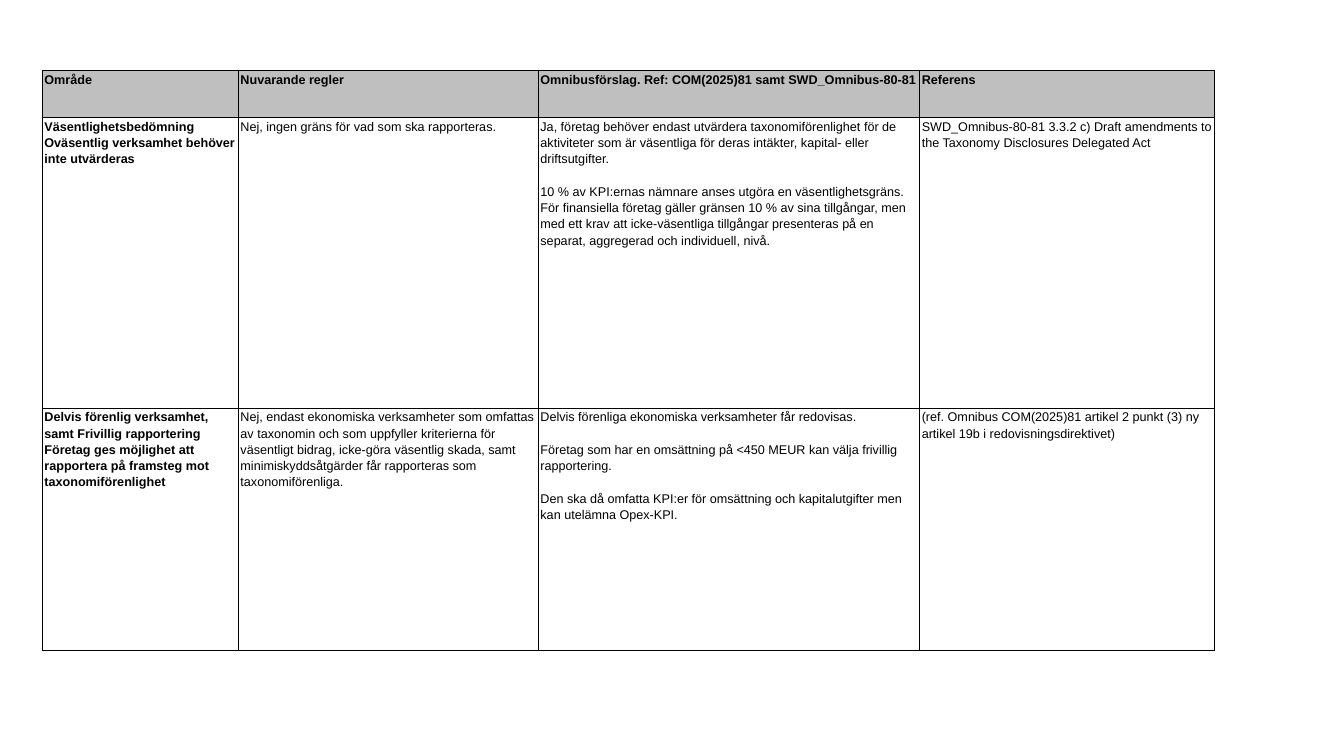
from pptx import Presentation
from pptx.dml.color import RGBColor
from pptx.enum.text import MSO_ANCHOR
from pptx.oxml import parse_xml
from pptx.oxml.ns import nsdecls
from pptx.util import Cm, Pt

TOP = MSO_ANCHOR.TOP
BLACK, WHITE, GREY = "000000", "FFFFFF", "BFBFBF"
COLUMN_WIDTHS = [4.94, 7.56, 9.61, 7.43]
TABLE_LEFT = 1.07
HEADER_TOP, HEADER_HEIGHT = 1.78, 1.19
ROW_HEIGHTS = [7.32, 6.1]

# Each cell is a list of paragraphs; \v is a line break within one.
HEADER = [[
    ["Område"],
    ["Nuvarande regler"],
    ["Omnibusförslag. Ref: COM(2025)81 samt SWD_Omnibus-80-81"],
    ["Referens"],
]]
RULES = [
    [
        ["Väsentlighetsbedömning\vOväsentlig verksamhet behöver inte utvärderas"],
        ["Nej, ingen gräns för vad som ska rapporteras."],
        ["Ja, företag behöver endast utvärdera taxonomiförenlighet för de aktiviteter "
         "som är väsentliga för deras intäkter, kapital- eller driftsutgifter.",
         "10 % av KPI:ernas nämnare anses utgöra en väsentlighetsgräns. För finansiella "
         "företag gäller gränsen 10 % av sina tillgångar, men med ett krav att "
         "icke-väsentliga tillgångar presenteras på en separat, aggregerad och "
         "individuell, nivå."],
        ["SWD_Omnibus-80-81 3.3.2 c) Draft amendments to the Taxonomy Disclosures "
         "Delegated Act"],
    ],
    [
        ["Delvis förenlig verksamhet, samt Frivillig rapportering\v"
         "Företag ges möjlighet att rapportera på framsteg mot taxonomiförenlighet"],
        ["Nej, endast ekonomiska verksamheter som omfattas av taxonomin och som uppfyller "
         "kriterierna för väsentligt bidrag, icke-göra väsentlig skada, samt "
         "minimiskyddsåtgärder får rapporteras som taxonomiförenliga."],
        ["Delvis förenliga ekonomiska verksamheter får redovisas.",
         "Företag som har en omsättning på <450 MEUR kan välja frivillig rapportering.",
         "Den ska då omfatta KPI:er för omsättning och kapitalutgifter men kan utelämna "
         "Opex-KPI."],
        ["(ref. Omnibus COM(2025)81 artikel 2 punkt (3) ny artikel 19b i "
         "redovisningsdirektivet)"],
    ],
]


def color(hex_value):
    return RGBColor.from_string(hex_value)


def format_cell(cell, paragraphs, fill, bold):
    """Fill a cell with text and give it thin black borders."""
    cell.margin_left = cell.margin_right = Cm(0.05)
    cell.margin_top = cell.margin_bottom = 0
    cell.vertical_anchor = TOP
    properties = cell._tc.get_or_add_tcPr()
    for side in ("lnL", "lnR", "lnT", "lnB"):
        properties.append(parse_xml(
            f'<a:{side} {nsdecls("a")} w="12700"><a:solidFill>'
            f'<a:srgbClr val="{BLACK}"/></a:solidFill></a:{side}>'))
    cell.fill.solid()
    cell.fill.fore_color.rgb = color(fill)

    cell.text_frame.text = "\n".join(paragraphs)
    for paragraph in cell.text_frame.paragraphs:
        paragraph.line_spacing = 1.15
        paragraph.space_after = Pt(11.6 if len(paragraphs) > 1 else 8)
        for run in paragraph.runs:
            run.font.name = "Arial"
            run.font.size = Pt(9)
            run.font.bold = bold
            run.font.color.rgb = color(BLACK)


presentation = Presentation()
presentation.slide_width = Cm(33.87)
presentation.slide_height = Cm(19.05)
slide = presentation.slides.add_slide(presentation.slide_layouts[6])

tables = [
    (RULES, HEADER_TOP + HEADER_HEIGHT, ROW_HEIGHTS, WHITE),
    (HEADER, HEADER_TOP, [HEADER_HEIGHT], GREY),
]
for rows, top, heights, fill in tables:
    table = slide.shapes.add_table(
        len(rows), len(COLUMN_WIDTHS), Cm(TABLE_LEFT), Cm(top),
        Cm(sum(COLUMN_WIDTHS)), Cm(sum(heights))).table
    table.first_row = False
    table.horz_banding = False
    for column, width in zip(table.columns, COLUMN_WIDTHS):
        column.width = Cm(width)
    for row_index, (row, height) in enumerate(zip(rows, heights)):
        table.rows[row_index].height = Cm(height)
        for column_index, paragraphs in enumerate(row):
            bold = rows is HEADER or column_index == 0
            format_cell(table.cell(row_index, column_index), paragraphs, fill, bold)

presentation.save("out.pptx")
